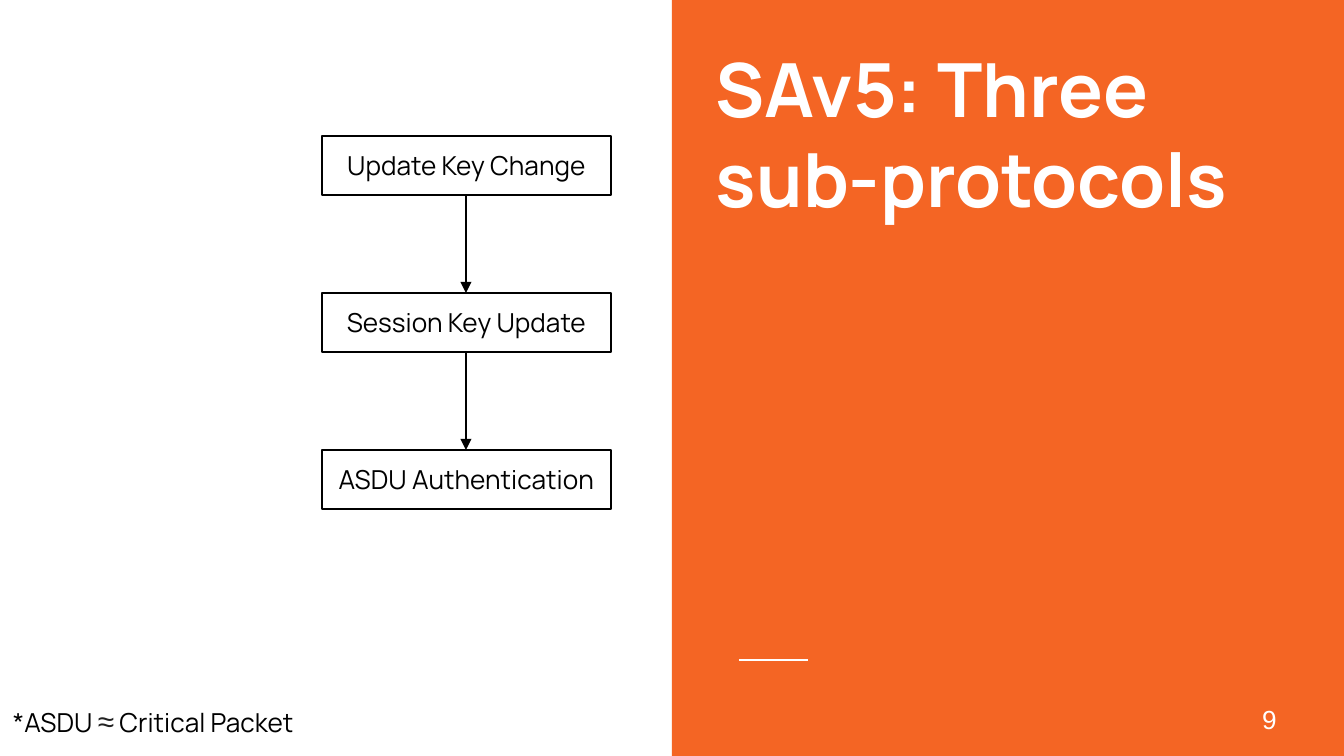
from dataclasses import dataclass
from itertools import pairwise

from lxml.etree import SubElement
from pptx import Presentation
from pptx.dml.color import RGBColor
from pptx.enum.shapes import MSO_CONNECTOR, MSO_SHAPE
from pptx.enum.text import MSO_ANCHOR, PP_ALIGN
from pptx.oxml.ns import qn
from pptx.shapes.base import BaseShape
from pptx.shapes.connector import Connector
from pptx.slide import Slide
from pptx.text.text import Font, TextFrame
from pptx.util import Emu, Pt


@dataclass(frozen=True)
class Theme:
    white: RGBColor = RGBColor(0xFF, 0xFF, 0xFF)
    black: RGBColor = RGBColor(0x00, 0x00, 0x00)
    symbol: RGBColor = RGBColor(0x22, 0x22, 0x22)
    orange: RGBColor = RGBColor(0xF4, 0x65, 0x24)
    title_size: int = 40
    body_size: int = 14
    symbol_size: int = 16
    thin_line: float = 0.75
    accent_line: float = 1.5
    main_font: str = "Manrope"
    plain_font: str = "Arial"


@dataclass(frozen=True)
class Box:
    left: int
    top: int
    width: int
    height: int

    @property
    def center(self) -> int:
        return self.left + self.width // 2

    @property
    def bottom(self) -> int:
        return self.top + self.height


@dataclass(frozen=True)
class Step:
    label: str
    box: Box


THEME = Theme()
SLIDE_WIDTH, SLIDE_HEIGHT = 1344, 756
INSET = 13
STEP_LABELS = ("Update Key Change", "Session Key Update", "ASDU Authentication")
STEP_PITCH = 157
STEPS = [
    Step(label, Box(322, 136 + index * STEP_PITCH, 289, 59))
    for index, label in enumerate(STEP_LABELS)
]


def px(length: int) -> Emu:
    return Emu(round(length * 914400 / 134.4))


def place(box: Box) -> tuple[Emu, Emu, Emu, Emu]:
    return px(box.left), px(box.top), px(box.width), px(box.height)


def style_font(font: Font, name: str, size: int, color: RGBColor, bold: bool = False) -> None:
    font.name = name
    font.size = Pt(size)
    font.color.rgb = color
    font.bold = bold


def prepare_frame(frame: TextFrame, anchor: MSO_ANCHOR) -> None:
    frame.word_wrap = True
    frame.vertical_anchor = anchor
    frame.margin_left = frame.margin_right = px(INSET)
    frame.margin_top = frame.margin_bottom = px(INSET)


def add_text_box(slide: Slide, box: Box, anchor: MSO_ANCHOR = MSO_ANCHOR.TOP) -> TextFrame:
    frame = slide.shapes.add_textbox(*place(box)).text_frame
    prepare_frame(frame, anchor)
    return frame


def add_rectangle(slide: Slide, box: Box) -> BaseShape:
    shape = slide.shapes.add_shape(MSO_SHAPE.RECTANGLE, *place(box))
    shape.shadow.inherit = False
    return shape


def add_line(
    slide: Slide, start: tuple[int, int], end: tuple[int, int], color: RGBColor, width: float
) -> Connector:
    line = slide.shapes.add_connector(
        MSO_CONNECTOR.STRAIGHT, px(start[0]), px(start[1]), px(end[0]), px(end[1])
    )
    line.line.color.rgb = color
    line.line.width = Pt(width)
    SubElement(line._element.spPr, qn("a:effectLst"))
    return line


def add_orange_panel(slide: Slide) -> None:
    middle = SLIDE_WIDTH // 2
    panel = add_rectangle(slide, Box(middle, 0, middle, SLIDE_HEIGHT))
    panel.fill.solid()
    panel.fill.fore_color.rgb = THEME.orange
    panel.line.fill.background()
    add_line(slide, (739, 660), (808, 660), THEME.white, THEME.accent_line)


def add_title(slide: Slide) -> None:
    paragraph = add_text_box(slide, Box(703, 30, 547, 211)).paragraphs[0]
    paragraph.text = "SAv5: Three sub-protocols"
    style_font(paragraph.font, THEME.main_font, THEME.title_size, THEME.white, bold=True)


def add_slide_number(slide: Slide) -> None:
    paragraph = add_text_box(slide, Box(1249, 690, 81, 58), MSO_ANCHOR.MIDDLE).paragraphs[0]
    paragraph.text = "9"
    style_font(paragraph.font, THEME.plain_font, THEME.body_size, THEME.white)


def add_footnote(slide: Slide) -> None:
    paragraph = add_text_box(slide, Box(0, 690, 567, 66)).paragraphs[0]
    main_style = (THEME.main_font, THEME.body_size, THEME.black)
    symbol_style = (THEME.plain_font, THEME.symbol_size, THEME.symbol)
    for text, style in (
        ("*ASDU ", main_style),
        ("≈", symbol_style),
        (" Critical Packet", main_style),
    ):
        run = paragraph.add_run()
        run.text = text
        style_font(run.font, *style)


def add_step(slide: Slide, step: Step) -> None:
    shape = add_rectangle(slide, step.box)
    shape.fill.background()
    shape.line.color.rgb = THEME.black
    shape.line.width = Pt(THEME.thin_line)
    prepare_frame(shape.text_frame, MSO_ANCHOR.MIDDLE)
    paragraph = shape.text_frame.paragraphs[0]
    paragraph.text = step.label
    paragraph.alignment = PP_ALIGN.CENTER
    style_font(paragraph.font, THEME.main_font, THEME.body_size, THEME.black)


def add_arrow(slide: Slide, upper: Box, lower: Box) -> None:
    arrow = add_line(
        slide,
        (upper.center, upper.bottom),
        (lower.center, lower.top),
        THEME.black,
        THEME.thin_line,
    )
    SubElement(arrow.line._get_or_add_ln(), qn("a:tailEnd"), type="triangle")


def main() -> None:
    presentation = Presentation()
    presentation.slide_width = px(SLIDE_WIDTH)
    presentation.slide_height = px(SLIDE_HEIGHT)
    slide = presentation.slides.add_slide(presentation.slide_layouts[6])
    add_orange_panel(slide)
    add_title(slide)
    add_slide_number(slide)
    add_footnote(slide)
    for step in STEPS:
        add_step(slide, step)
    for upper, lower in pairwise(STEPS):
        add_arrow(slide, upper.box, lower.box)
    presentation.save("out.pptx")


if __name__ == "__main__":
    main()
